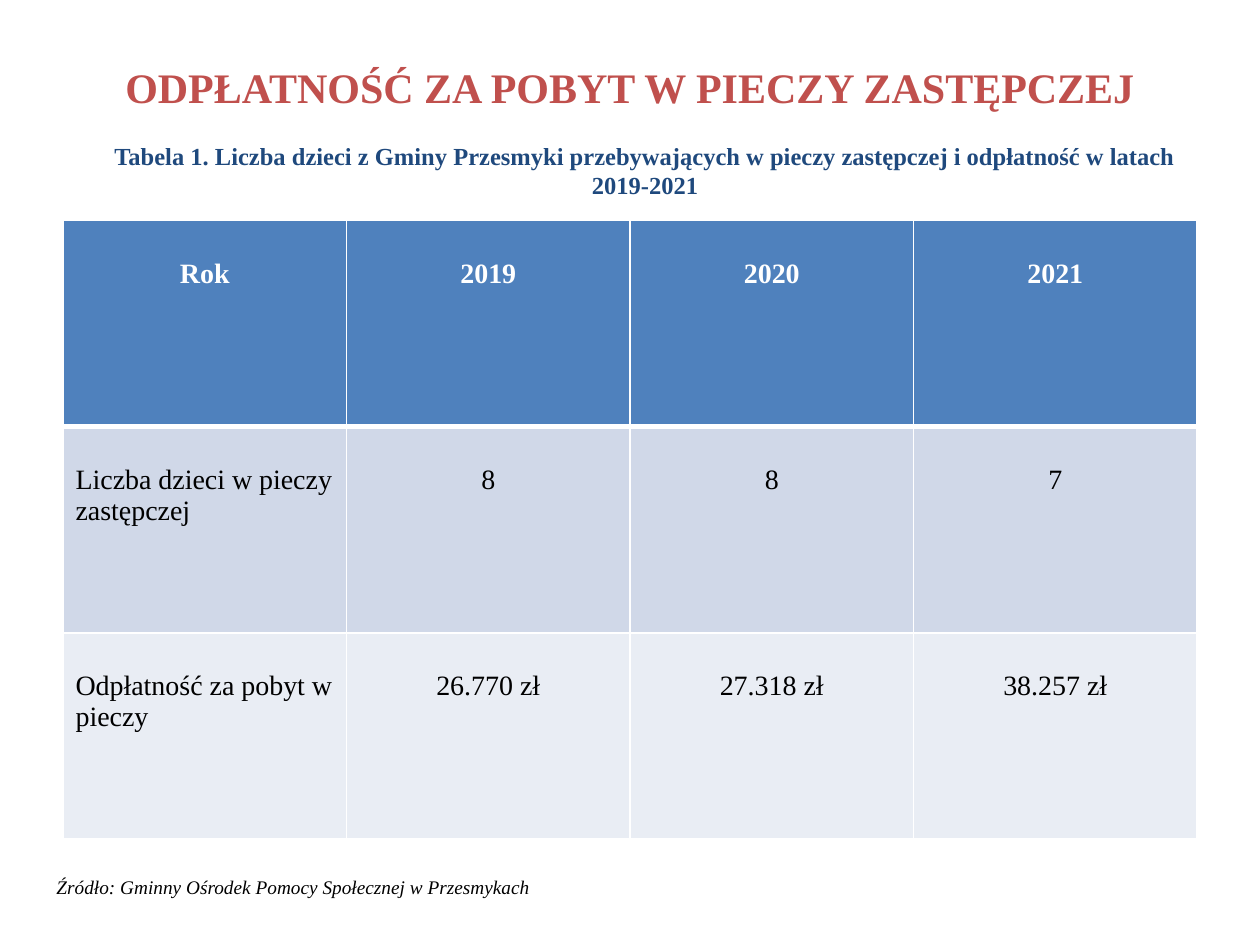
import pptx
import pptx.dml.color
import pptx.enum.text
import pptx.oxml
import pptx.oxml.ns
import pptx.util
from pptx.util import Inches

COLORS = {
    "title": "C0504D",
    "caption": "1F497D",
    "text": "000000",
    "white": "FFFFFF",
    "header": "4F81BD",
    "odd_row": "D0D8E8",
    "even_row": "E9EDF4",
}
FONT = "Times New Roman"
ALIGN = pptx.enum.text.PP_ALIGN
ANCHOR = pptx.enum.text.MSO_ANCHOR
ROWS = [
    ["Rok", "2019", "2020", "2021"],
    ["Liczba dzieci w pieczy zastępczej", "8", "8", "7"],
    ["Odpłatność za pobyt w pieczy", "26.770 zł", "27.318 zł", "38.257 zł"],
]
ROW_FILLS = ["header", "odd_row", "even_row"]


def rgb(name):
    """Return the named colour."""
    return pptx.dml.color.RGBColor.from_string(COLORS[name])


def write(text_frame, text, size, color, align=ALIGN.LEFT, bold=False, italic=False):
    """Put one formatted paragraph into a text frame."""
    text_frame.text = text
    paragraph = text_frame.paragraphs[0]
    paragraph.alignment = align
    for run in paragraph.runs:
        run.font.name = FONT
        run.font.size = pptx.util.Pt(size)
        run.font.bold = bold
        run.font.italic = italic
        run.font.color.rgb = rgb(color)


def add_text(slide, left, top, width, height, text, size, color, anchor=ANCHOR.TOP, **style):
    """Add a wrapping text box."""
    shape = slide.shapes.add_textbox(Inches(left), Inches(top), Inches(width), Inches(height))
    shape.text_frame.word_wrap = True
    shape.text_frame.vertical_anchor = anchor
    write(shape.text_frame, text, size, color, **style)


def set_borders(cell, widths):
    """Draw white cell borders with widths in points, keyed by side."""
    properties = cell._tc.get_or_add_tcPr()
    for position, (side, width) in enumerate(widths.items()):
        line = pptx.oxml.parse_xml(
            f'<a:{side} {pptx.oxml.ns.nsdecls("a")} w="{pptx.util.Pt(width)}">'
            f'<a:solidFill><a:srgbClr val="{COLORS["white"]}"/></a:solidFill></a:{side}>'
        )
        properties.insert(position, line)


def add_payment_table(slide):
    """Add the table of children and payments by year."""
    frame = slide.shapes.add_table(
        len(ROWS), len(ROWS[0]), Inches(0.5), Inches(1.75), Inches(9), Inches(4.91)
    )
    table = frame.table
    for row_index, values in enumerate(ROWS):
        header = row_index == 0
        for column_index, value in enumerate(values):
            cell = table.cell(row_index, column_index)
            cell.margin_top = Inches(0.3)
            cell.fill.solid()
            cell.fill.fore_color.rgb = rgb(ROW_FILLS[row_index])
            set_borders(cell, {
                "lnL": 1,
                "lnR": 1,
                "lnT": 3 if row_index == 1 else 1,
                "lnB": 3 if header else 1,
            })
            centered = header or column_index > 0
            write(
                cell.text_frame, value, 16, "white" if header else "text",
                align=ALIGN.CENTER if centered else ALIGN.LEFT, bold=header,
            )


def main():
    """Build and save the slide."""
    presentation = pptx.Presentation()
    presentation.slide_width = Inches(10)
    presentation.slide_height = Inches(7.5)
    slide = presentation.slides.add_slide(presentation.slide_layouts[6])
    add_text(
        slide, 0.5, 0.3, 9, 0.77, "ODPŁATNOŚĆ ZA POBYT W PIECZY ZASTĘPCZEJ",
        24, "title", anchor=ANCHOR.MIDDLE, align=ALIGN.CENTER, bold=True,
    )
    add_payment_table(slide)
    add_text(
        slide, 0.75, 1.07, 8.74, 0.57,
        "Tabela 1. Liczba dzieci z Gminy Przesmyki przebywających w pieczy zastępczej "
        "i odpłatność w latach 2019-2021",
        14, "caption", align=ALIGN.CENTER, bold=True,
    )
    add_text(
        slide, 0.35, 6.9, 5, 0.29, "Źródło: Gminny Ośrodek Pomocy Społecznej w Przesmykach",
        11, "text", italic=True,
    )
    presentation.save("out.pptx")


if __name__ == "__main__":
    main()
